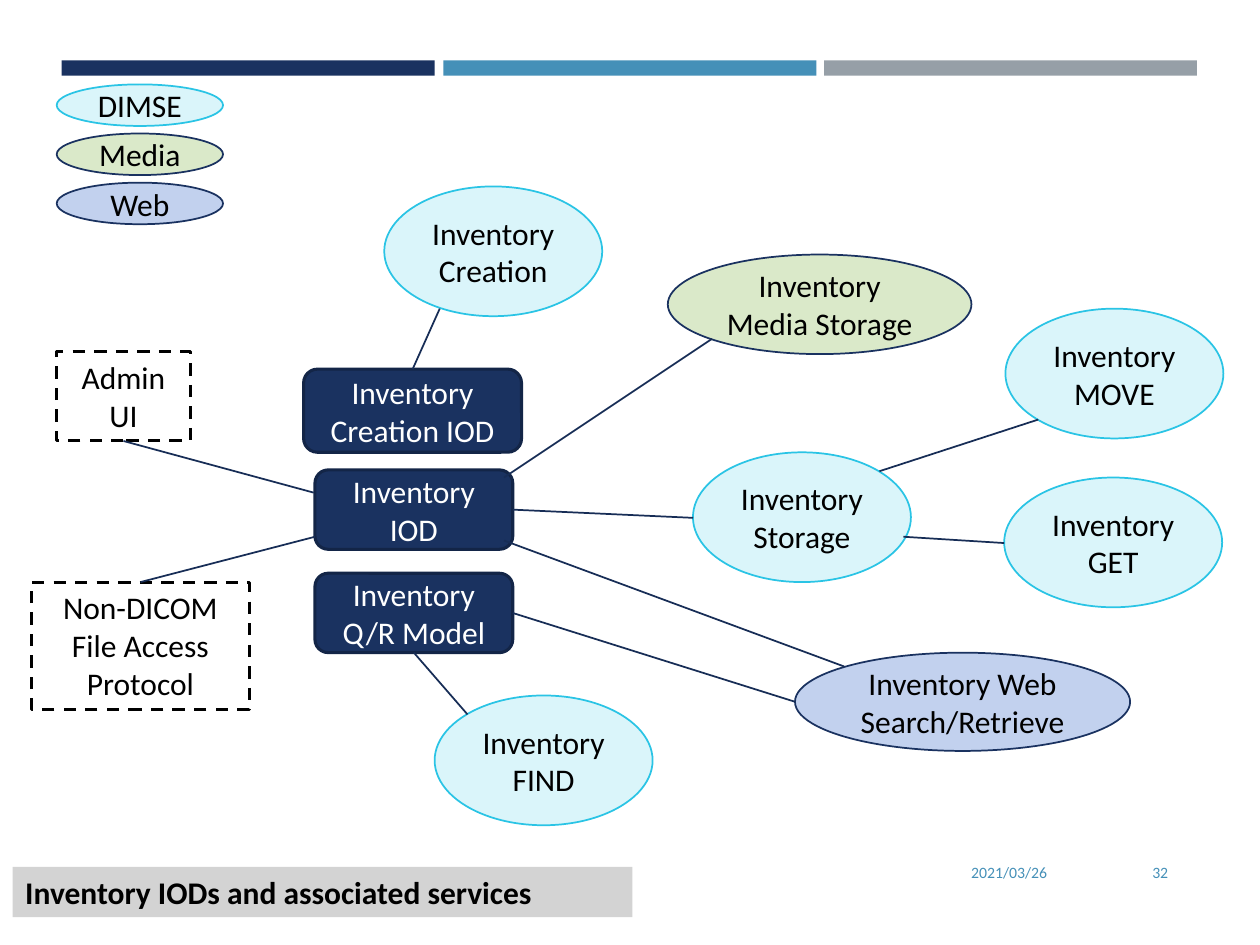
from pptx import Presentation
from pptx.dml.color import RGBColor
from pptx.enum.dml import MSO_LINE
from pptx.enum.shapes import MSO_CONNECTOR, MSO_SHAPE as SHAPE
from pptx.enum.text import MSO_ANCHOR as ANCHOR, PP_ALIGN as ALIGN
from pptx.oxml.ns import qn
from pptx.util import Inches, Pt

NAVY = RGBColor(0x1A, 0x32, 0x60)
DARK_NAVY = RGBColor(0x13, 0x25, 0x47)
LINK_NAVY = RGBColor(0x17, 0x2D, 0x56)
BLUE = RGBColor(0x45, 0x90, 0xB8)
GRAY = RGBColor(0x96, 0x9F, 0xA7)
LIGHT_GRAY = RGBColor(0xD3, 0xD3, 0xD3)
CYAN = RGBColor(0x2A, 0xC4, 0xE5)
PALE_CYAN = RGBColor(0xDA, 0xF5, 0xFA)
PALE_GREEN = RGBColor(0xDA, 0xE9, 0xC9)
PALE_BLUE = RGBColor(0xC2, 0xD1, 0xEE)
BLACK = RGBColor(0, 0, 0)
WHITE = RGBColor(0xFF, 0xFF, 0xFF)

# kind: preset, fill, line colour, line width, text colour, anchor
KINDS = {
    "dimse": (SHAPE.OVAL, PALE_CYAN, CYAN, 1, BLACK, ANCHOR.MIDDLE),
    "media": (SHAPE.OVAL, PALE_GREEN, NAVY, 1, BLACK, ANCHOR.MIDDLE),
    "web": (SHAPE.OVAL, PALE_BLUE, NAVY, 1, BLACK, ANCHOR.MIDDLE),
    "iod": (SHAPE.ROUNDED_RECTANGLE, NAVY, DARK_NAVY, 1.75, WHITE, ANCHOR.MIDDLE),
    "external": (SHAPE.RECTANGLE, WHITE, BLACK, 1.75, BLACK, ANCHOR.TOP),
}
TOP, LEFT, BOTTOM, RIGHT = range(4)

deck = Presentation()
deck.slide_width, deck.slide_height = Inches(10), Inches(7.5)
page = deck.slides.add_slide(deck.slide_layouts[5])


def write(frame, text, size, color, align, anchor):
    """Put one paragraph per line of text into the frame."""
    frame.word_wrap = True
    frame.vertical_anchor = anchor
    frame.text = text
    for para in frame.paragraphs:
        para.alignment = align
        para.font.name = "Calibri"
        para.font.size = Pt(size)
        para.font.color.rgb = color


def add_node(kind, text, left, top, width, height):
    preset, fill, line, weight, color, anchor = KINDS[kind]
    node = page.shapes.add_shape(
        preset, Inches(left), Inches(top), Inches(width), Inches(height))
    node.shadow.inherit = False
    node.fill.solid()
    node.fill.fore_color.rgb = fill
    node.line.color.rgb = line
    node.line.width = Pt(weight)
    if kind == "external":
        node.line.dash_style = MSO_LINE.DASH
    write(node.text_frame, text, 18, color, ALIGN.CENTER, anchor)
    return node


# Header bars
for left, color in ((0.49, NAVY), (3.52, BLUE), (6.54, GRAY)):
    bar = page.shapes.add_shape(
        SHAPE.RECTANGLE, Inches(left), Inches(0.48), Inches(2.96), Inches(0.12))
    bar.shadow.inherit = False
    bar.fill.solid()
    bar.fill.fore_color.rgb = color
    bar.line.fill.background()

# Title strip at the foot of the page
title = page.shapes.title
title.left, title.top = Inches(0.1), Inches(6.88)
title.width, title.height = Inches(4.92), Inches(0.4)
title.fill.solid()
title.fill.fore_color.rgb = LIGHT_GRAY
write(title.text_frame, "Inventory IODs and associated services",
      18, BLACK, ALIGN.LEFT, ANCHOR.TOP)
title.text_frame.paragraphs[0].font.bold = True

# Date and page number
for text, left, width in (("2021/03/26", 6.08, 2.33), ("32", 8.53, 0.84)):
    box = page.shapes.add_textbox(
        Inches(left), Inches(6.72), Inches(width), Inches(0.4))
    write(box.text_frame, text, 9, BLUE, ALIGN.RIGHT, ANCHOR.MIDDLE)

# Legend
for row, (kind, text) in enumerate(
        (("dimse", "DIMSE"), ("media", "Media"), ("web", "Web"))):
    add_node(kind, text, 0.45, 0.67 + row * 0.39, 1.32, 0.33)

# Services
for text, left, top in (
    ("Inventory Creation", 3.05, 1.48),
    ("Inventory Storage", 5.5, 3.59),
    ("Inventory MOVE", 7.98, 2.45),
    ("Inventory GET", 7.97, 3.79),
    ("Inventory FIND", 3.45, 5.52),
):
    add_node("dimse", text, left, top, 1.73, 1.03)
add_node("media", "Inventory Media Storage", 5.3, 2.02, 2.41, 0.79)
add_node("web", "Inventory Web Search/Retrieve", 6.31, 5.18, 2.66, 0.78)

# Information objects and external parts
creation_iod = add_node("iod", "Inventory\nCreation IOD", 2.41, 2.93, 1.73, 0.66)
inventory_iod = add_node("iod", "Inventory IOD", 2.5, 3.73, 1.57, 0.63)
query_model = add_node("iod", "Inventory Q/R Model", 2.5, 4.55, 1.57, 0.63)
admin_ui = add_node("external", "Admin\nUI", 0.45, 2.79, 1.06, 0.71)
file_access = add_node(
    "external", "Non-DICOM\nFile Access\nProtocol", 0.25, 4.62, 1.73, 1.01)

# Links: start point, end point, box and side joined at the start
for start, end, box, side in (
    ((3.28, 2.93), (3.49, 2.45), creation_iod, TOP),
    ((4.06, 4.05), (5.5, 4.11), inventory_iod, RIGHT),
    ((4.06, 4.86), (6.31, 5.57), query_model, RIGHT),
    ((3.28, 5.18), (3.71, 5.67), query_model, BOTTOM),
    ((1.12, 4.62), (2.5, 4.26), file_access, TOP),
    ((0.98, 3.5), (2.49, 3.91), admin_ui, BOTTOM),
    ((4, 3.79), (5.65, 2.69), None, None),
    ((4, 4.29), (6.7, 5.29), None, None),
    ((6.98, 3.74), (8.24, 3.33), None, None),
    ((7.17, 4.26), (7.97, 4.31), None, None),
):
    link = page.shapes.add_connector(
        MSO_CONNECTOR.STRAIGHT, *(Inches(value) for value in start + end))
    if box is not None:
        link.begin_connect(box, side)
    link.line.color.rgb = LINK_NAVY
    link.line.width = Pt(1)
    properties = link._element.spPr
    properties.append(properties.makeelement(qn("a:effectLst"), {}))

deck.save("out.pptx")
